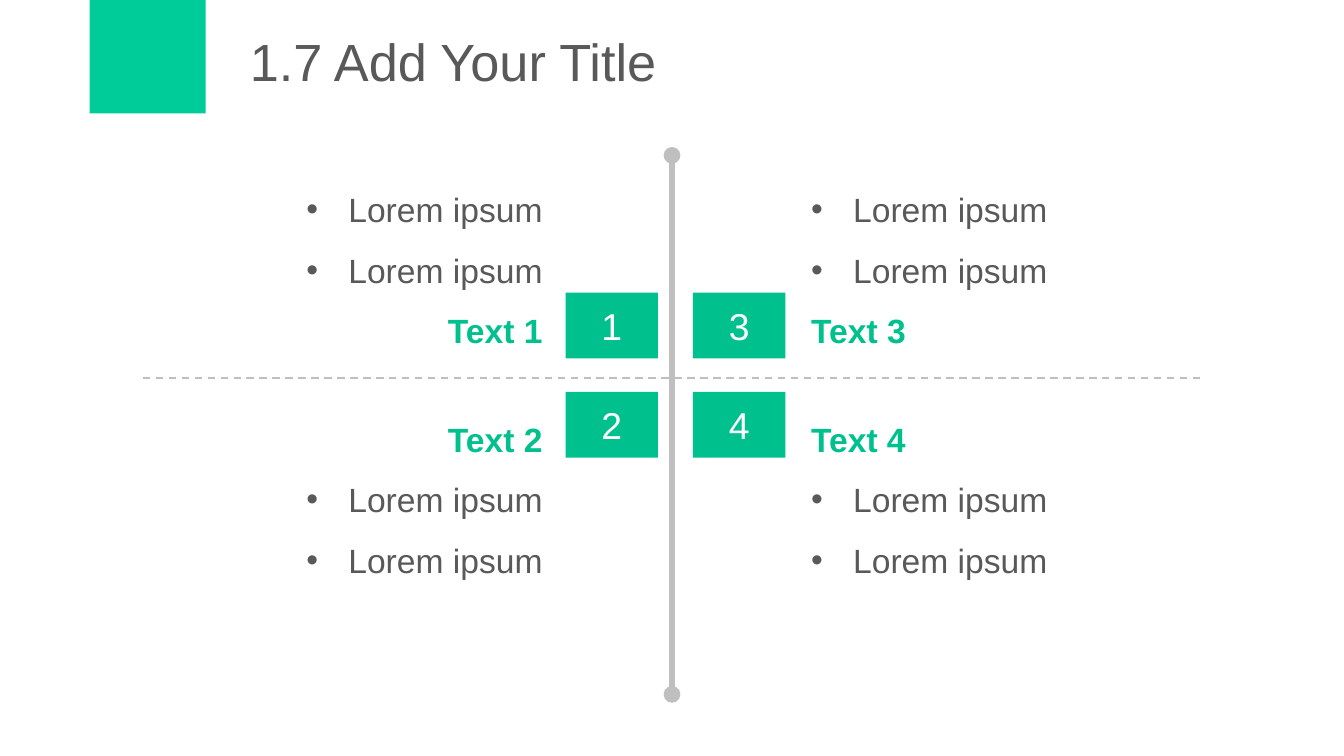
from pptx import Presentation
from pptx.dml.color import RGBColor as RGB
from pptx.enum.dml import MSO_LINE as Dash
from pptx.enum.shapes import MSO_CONNECTOR as Conn, MSO_SHAPE as Kind
from pptx.enum.text import MSO_ANCHOR as Anchor, MSO_AUTO_SIZE as Auto, PP_ALIGN as Align
from pptx.oxml.ns import qn
from pptx.util import Pt
from lxml.etree import SubElement as Sub

PX = 9525  # 96 px to the inch
HUES = {"mark": "00CC99", "green": "00C08E", "text": "595959",
        "gray": "BFBFBF", "white": "FFFFFF"}


def style(par, size, hue, bold=False):
    for run in par.runs:
        run.font.name = "Arial"
        run.font.size = Pt(size)
        run.font.bold = bold
        run.font.color.rgb = RGB.from_string(HUES[hue])


def block(x, y, w, h, hue):
    box = shapes.add_shape(Kind.RECTANGLE, x * PX, y * PX, w * PX, h * PX)
    box.shadow.inherit = False
    box.fill.solid()
    box.fill.fore_color.rgb = RGB.from_string(HUES[hue])
    box.line.fill.background()
    return box


deck = Presentation()
deck.slide_width, deck.slide_height = 960 * PX, 540 * PX
shapes = deck.slides.add_slide(deck.slide_layouts[6]).shapes

# Title with its corner mark
block(64, 0, 83, 81, "mark")
title = shapes.add_textbox(169 * PX, 13 * PX, 757 * PX, 61 * PX)
frame = title.text_frame
frame.word_wrap = True
frame.vertical_anchor = Anchor.MIDDLE
frame.text = "1.7 Add Your Title"
style(frame.paragraphs[0], 28, "text")

# Axes: a dashed one across, a thick one with round ends down
for x1, y1, x2, y2, width in [(102, 270, 858, 270, 1), (480, 111, 480, 496, 3)]:
    axis = shapes.add_connector(Conn.STRAIGHT, x1 * PX, y1 * PX, x2 * PX, y2 * PX)
    axis.line.color.rgb = RGB.from_string(HUES["gray"])
    axis.line.width = Pt(width)
    if x1 == x2:
        for end in ("a:headEnd", "a:tailEnd"):
            Sub(axis.line._get_or_add_ln(), qn(end), type="oval")
    else:
        axis.line.dash_style = Dash.DASH
    Sub(axis._element.spPr, qn("a:effectLst"))

# Quadrants: number tile and list, the heading next to the dashed axis
for num, tile, left, top, width, height in [
        (1, 404, 193, 116, 204, 140), (2, 404, 140, 280, 257, 140),
        (3, 495, 570, 116, 211, 140), (4, 495, 570, 280, 257, 135)]:
    upper = num % 2 == 1
    box = block(tile, 209 if upper else 280, 66, 47, "green")
    frame = box.text_frame
    frame.vertical_anchor = Anchor.MIDDLE
    frame.text = str(num)
    frame.paragraphs[0].alignment = Align.CENTER
    style(frame.paragraphs[0], 20, "white")

    head = f"Text {num}"
    lines = ["Lorem ipsum"] * 2
    lines.insert(2 if upper else 0, head)
    frame = shapes.add_textbox(left * PX, top * PX, width * PX, height * PX).text_frame
    frame.word_wrap = True
    frame.auto_size = Auto.SHAPE_TO_FIT_TEXT
    frame.text = "\n".join(lines)
    for par in frame.paragraphs:
        par.alignment = Align.RIGHT if num < 3 else Align.LEFT
        par.line_spacing = 1.5
        if par.text == head:
            style(par, 18, "green", True)
        else:
            style(par, 18, "text")
            props = par._p.get_or_add_pPr()
            props.set("marL", str(30 * PX))
            props.set("indent", str(-30 * PX))
            Sub(props, qn("a:buFont"), typeface="Arial")
            Sub(props, qn("a:buChar"), char="•")

deck.save("out.pptx")
